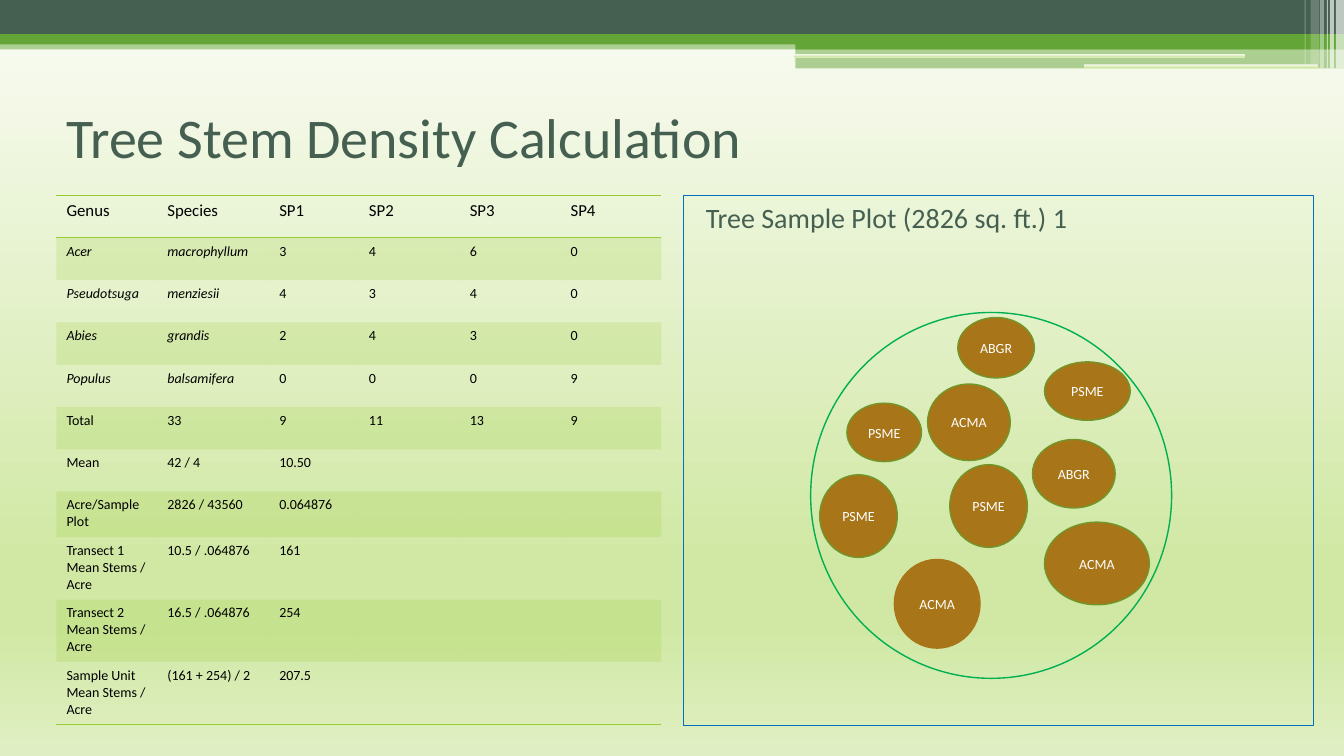
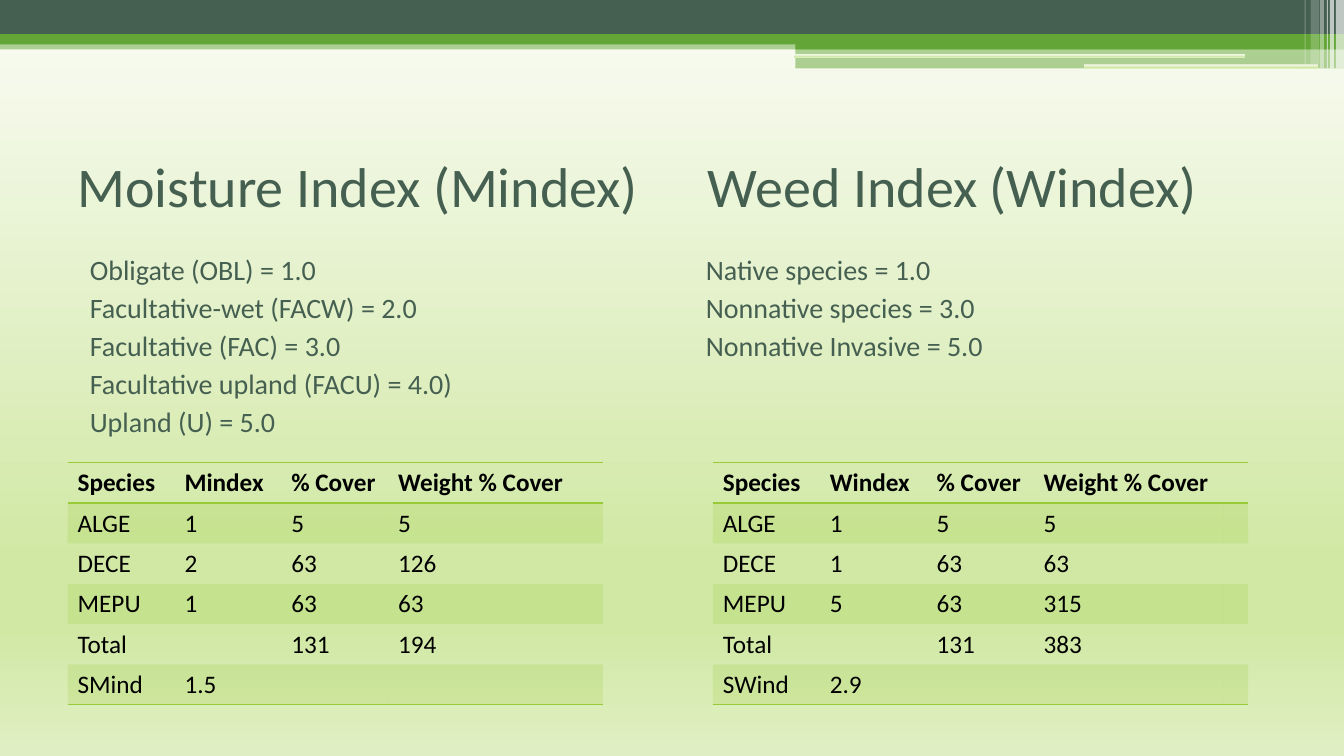
"""Build two slides on tree density and on moisture and weed indices."""
import pptx
import pptx.dml.color
import pptx.enum.shapes
import pptx.enum.text
import pptx.oxml.ns
import pptx.util
from lxml import etree

Inches = pptx.util.Inches
Pt = pptx.util.Pt
RGBColor = pptx.dml.color.RGBColor
MSO_SHAPE = pptx.enum.shapes.MSO_SHAPE
PP_ALIGN = pptx.enum.text.PP_ALIGN
MSO_ANCHOR = pptx.enum.text.MSO_ANCHOR
qn = pptx.oxml.ns.qn

DARK = RGBColor(0x45, 0x5F, 0x51)
GREEN = RGBColor(0x63, 0xA5, 0x37)
LIME = RGBColor(0x99, 0xCB, 0x38)
BROWN = RGBColor(0xA8, 0x75, 0x18)
OLIVE = RGBColor(0x71, 0x96, 0x29)
PLOT_GREEN = RGBColor(0x00, 0xB0, 0x50)
BLUE = RGBColor(0x00, 0x70, 0xC0)
WHITE = RGBColor(0xFF, 0xFF, 0xFF)
BLACK = RGBColor(0x00, 0x00, 0x00)
BACKGROUND = [(0, "FAFCF5"), (74, "D1E8A5"), (83, "D1E8A5"), (100, "E0EFC3")]
FONT = "Calibri"
NO_STYLE = "{2D5ABB26-0587-4C30-8999-92F81FD0307C}"


def write(p, text, size, color):
    p.text = text
    p.font.name = FONT
    p.font.size = Pt(size)
    p.font.color.rgb = color


def add_grid(s, left, top, widths, heights, rows, header_size, size):
    frame = s.shapes.add_table(len(rows), len(widths), Inches(left), Inches(top),
                               Inches(sum(widths)), Inches(sum(heights)))
    next(frame.element.iter(qn("a:tableStyleId"))).text = NO_STYLE
    table = frame.table
    for column, width in zip(table.columns, widths):
        column.width = Inches(width)
    for i, (height, values) in enumerate(zip(heights, rows)):
        table.rows[i].height = Inches(height)
        for j in range(len(widths)):
            cell = table.cell(i, j)
            text = values[j] if j < len(values) else ""
            write(cell.text_frame.paragraphs[0], text, size if i else header_size, BLACK)
            if i % 2:
                cell.fill.solid()
                cell.fill.fore_color.rgb = LIME
                clr = next(cell._tc.iter(qn("a:srgbClr")))
                for clr in cell._tc.tcPr.iter(qn("a:srgbClr")):
                    etree.SubElement(clr, qn("a:alpha"), val="20000")
            else:
                cell.fill.background()
            edges = {0: ["a:lnT", "a:lnB"], len(rows) - 1: ["a:lnB"]}.get(i, [])
            for k, edge in enumerate(edges):
                ln = etree.Element(qn(edge), w=str(Pt(1)))
                solid = etree.SubElement(ln, qn("a:solidFill"))
                etree.SubElement(solid, qn("a:srgbClr"), val=str(LIME))
                cell._tc.tcPr.insert(k, ln)
    return table


prs = pptx.Presentation()
prs.slide_width = Inches(13.33)
prs.slide_height = Inches(7.5)
master = prs.slide_master
layout = prs.slide_layouts[5]

titles = [
    ("Tree Stem Density Calculation", 0.56, 0.77),
    ("Moisture Index (Mindex)\tWeed Index (Windex)", 0.67, 1.25),
]
slides = []
for text, left, top in titles:
    s = prs.slides.add_slide(layout)
    title = s.shapes.title
    title.left, title.top = Inches(left), Inches(top)
    title.width, title.height = Inches(12), Inches(1.17)
    title.text_frame.vertical_anchor = MSO_ANCHOR.MIDDLE
    p = title.text_frame.paragraphs[0]
    write(p, text, 40, DARK)
    p.alignment = PP_ALIGN.LEFT
    if "\t" in text:
        tabs = etree.Element(qn("a:tabLst"))
        etree.SubElement(tabs, qn("a:tab"), pos=str(Inches(6.25)), algn="l")
        p._p.get_or_add_pPr().insert(0, tabs)
    slides.append(s)
density, indices = slides

bands = [
    (0, 0.4, 13.33, 0.09, GREEN, 50),
    (0, 0, 13.33, 0.34, DARK, 100),
    (0, 0.34, 13.33, 0.1, GREEN, 100),
    (7.89, 0.39, 5.44, 0.1, GREEN, 100),
    (7.89, 0.48, 5.44, 0.2, GREEN, 50),
    (7.88, 0.54, 4.47, 0.03, None, 100),
    (10.75, 0.64, 2.33, 0.04, None, 100),
    (13.25, 0, 0.08, 0.68, WHITE, 65),
    (13.19, 0, 0.04, 0.68, WHITE, 65),
    (13.16, 0, 0.01, 0.68, WHITE, 60),
    (13.09, 0, 0.04, 0.68, WHITE, 40),
    (13, 0, 0.08, 0.64, WHITE, 20),
    (12.94, 0, 0.01, 0.64, WHITE, 30),
]
gradients = [(master.background.fill, master.element)]
for i, (left, top, width, height, color, opacity) in enumerate(bands):
    kind = MSO_SHAPE.RECTANGLE if color else MSO_SHAPE.ROUNDED_RECTANGLE
    band = density.shapes.add_shape(kind, Inches(left), Inches(top),
                                    Inches(width), Inches(height))
    band.shadow.inherit = False
    band.line.fill.background()
    if color:
        band.fill.solid()
        band.fill.fore_color.rgb = color
        clr = next(band.element.iter(qn("a:srgbClr")))
        etree.SubElement(clr, qn("a:alpha"), val=str(opacity * 1000))
    else:
        gradients.append((band.fill, band.element))
    band.element.nvSpPr.cNvPr.set("id", str(100 + i))
    master.shapes.element.insert(2 + i, band.element)
for fill, element in gradients:
    fill.gradient()
    fill.gradient_angle = 270
    stops = next(element.iter(qn("a:gsLst")))
    stops.clear()
    for position, color in BACKGROUND:
        stop = etree.SubElement(stops, qn("a:gs"), pos=str(position * 1000))
        etree.SubElement(stop, qn("a:srgbClr"), val=color)

stem_rows = [
    ["Genus", "Species", "SP1", "SP2", "SP3", "SP4"],
    ["Acer", "macrophyllum", "3", "4", "6", "0"],
    ["Pseudotsuga", "menziesii", "4", "3", "4", "0"],
    ["Abies", "grandis", "2", "4", "3", "0"],
    ["Populus", "balsamifera", "0", "0", "0", "9"],
    ["Total", "33", "9", "11", "13", "9"],
    ["Mean", "42 / 4", "10.50"],
    ["Acre/Sample Plot", "2826 / 43560", "0.064876"],
    ["Transect 1 Mean Stems / Acre", "10.5 / .064876", "161"],
    ["Transect 2 Mean Stems / Acre", "16.5 / .064876", "254"],
    ["Sample Unit Mean Stems / Acre", "(161 + 254) / 2", "207.5"],
]
stems = add_grid(density, 0.56, 1.94, [1, 1.11, 0.89, 1, 1, 1],
                 [0.42] * 7 + [0.45] + [0.62] * 3, stem_rows, 12, 10)
for i in range(1, 5):
    for j in range(2):
        stems.cell(i, j).text_frame.paragraphs[0].font.italic = True

panel = density.shapes.add_shape(MSO_SHAPE.RECTANGLE, Inches(6.78), Inches(1.94),
                                 Inches(6.25), Inches(5.26))
panel.shadow.inherit = False
panel.fill.background()
panel.line.color.rgb = BLUE
panel.line.width = Pt(0.75)
tf = panel.text_frame
tf.vertical_anchor = MSO_ANCHOR.TOP
tf.margin_left = Inches(0.22)
p = tf.paragraphs[0]
write(p, "Tree Sample Plot (2826 sq. ft.) 1", 20, DARK)
p.alignment = PP_ALIGN.LEFT
p.space_before = Pt(3)

plot = density.shapes.add_shape(MSO_SHAPE.OVAL, Inches(8.04), Inches(3.1),
                                Inches(3.58), Inches(3.63))
plot.shadow.inherit = False
plot.fill.background()
plot.line.color.rgb = PLOT_GREEN
plot.line.width = Pt(1)

trees = [
    ("ABGR", 10.24, 4.36, 0.82, 0.68, OLIVE),
    ("ACMA", 10.36, 5.18, 1.04, 0.82, OLIVE),
    ("ACMA", 8.87, 5.55, 0.85, 0.88, BROWN),
    ("PSME", 10.36, 3.59, 0.85, 0.58, OLIVE),
    ("ABGR", 9.5, 3.15, 0.76, 0.6, OLIVE),
    ("ACMA", 9.2, 3.81, 0.82, 0.76, OLIVE),
    ("PSME", 8.13, 4.71, 0.77, 0.82, OLIVE),
    ("PSME", 9.42, 4.61, 0.77, 0.82, OLIVE),
    ("PSME", 8.4, 4, 0.74, 0.58, OLIVE),
]
for code, left, top, width, height, outline in trees:
    tree = density.shapes.add_shape(MSO_SHAPE.OVAL, Inches(left), Inches(top),
                                    Inches(width), Inches(height))
    tree.shadow.inherit = False
    tree.fill.solid()
    tree.fill.fore_color.rgb = BROWN
    tree.line.color.rgb = outline
    tree.line.width = Pt(1)
    tf = tree.text_frame
    tf.word_wrap = False
    tf.vertical_anchor = MSO_ANCHOR.MIDDLE
    write(tf.paragraphs[0], code, 10, WHITE)
    tf.paragraphs[0].alignment = PP_ALIGN.CENTER

scales = [
    (0.67, ["Obligate (OBL) = 1.0", "Facultative-wet (FACW) = 2.0",
            "Facultative (FAC) = 3.0", "Facultative upland (FACU) = 4.0)",
            "Upland (U) = 5.0"]),
    (6.78, ["Native species = 1.0", "Nonnative species = 3.0",
            "Nonnative Invasive = 5.0"]),
]
for left, lines in scales:
    box = indices.shapes.add_textbox(Inches(left), Inches(2.46), Inches(5.89), Inches(2.1))
    tf = box.text_frame
    tf.word_wrap = True
    tf.margin_left = Inches(0.22)
    for i, line in enumerate(lines):
        p = tf.add_paragraph() if i else tf.paragraphs[0]
        write(p, line, 20, DARK)
        p.space_before = Pt(3)

index_tables = [
    (0.67, [["Species", "Mindex", "% Cover", "Weight % Cover"],
            ["ALGE", "1", "5", "5"],
            ["DECE", "2", "63", "126"],
            ["MEPU", "1", "63", "63"],
            ["Total", "", "131", "194"],
            ["SMind", "1.5"]]),
    (7.07, [["Species", "Windex", "% Cover", "Weight % Cover"],
            ["ALGE", "1", "5", "5"],
            ["DECE", "1", "63", "63"],
            ["MEPU", "5", "63", "315"],
            ["Total", "", "131", "383"],
            ["SWind", "2.9"]]),
]
for left, rows in index_tables:
    table = add_grid(indices, left, 4.59, [1.06, 1.06, 1.06, 1.89, 0.23],
                     [0.4] * len(rows), rows, 18, 18)
    for j in range(len(table.columns)):
        table.cell(0, j).text_frame.paragraphs[0].font.bold = True

prs.save("out.pptx")
